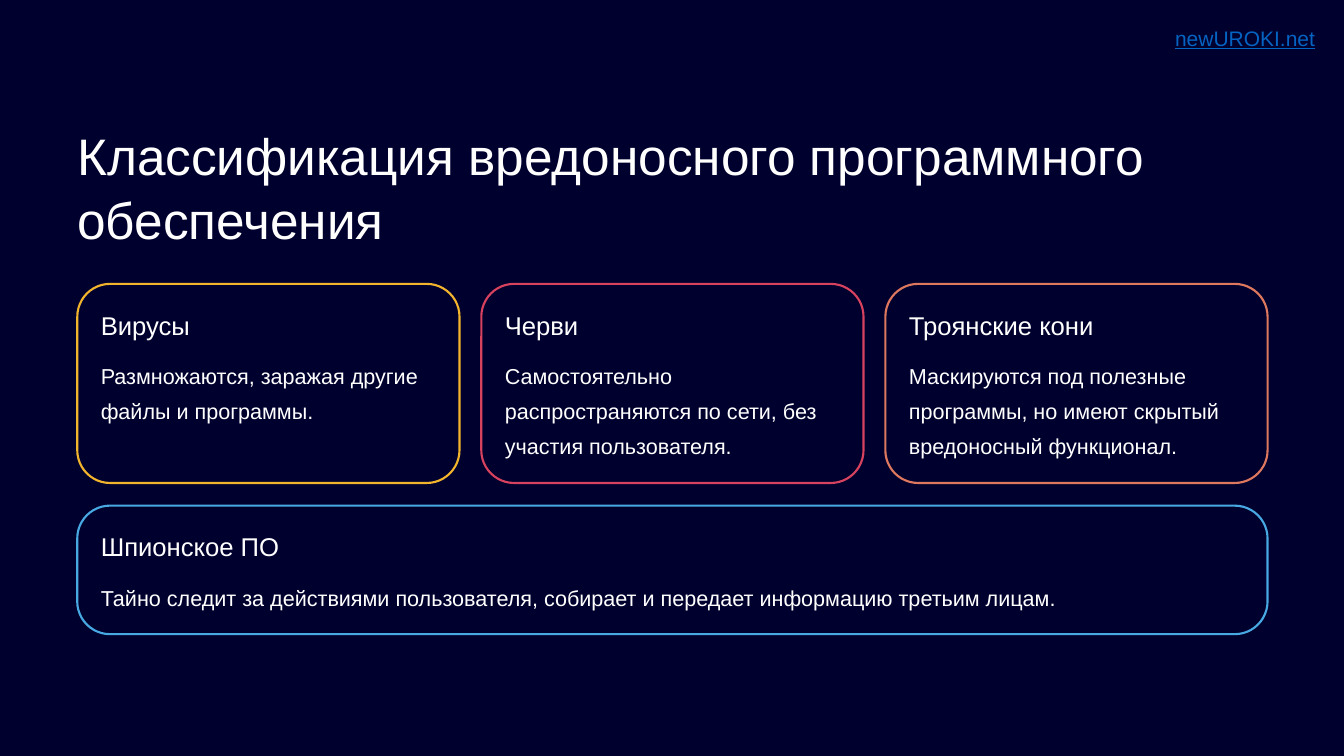
from pptx import Presentation
from pptx.dml.color import RGBColor
from pptx.enum.shapes import MSO_SHAPE
from pptx.enum.text import MSO_ANCHOR, MSO_AUTO_SIZE, PP_ALIGN
from pptx.util import Inches, Pt

NAVY = RGBColor(0x00, 0x00, 0x2E)
WHITE = RGBColor(0xFF, 0xFF, 0xFF)
YELLOW = RGBColor(0xF2, 0xB4, 0x2D)
CRIMSON = RGBColor(0xD7, 0x42, 0x5E)
CORAL = RGBColor(0xDD, 0x78, 0x5E)
SKY = RGBColor(0x48, 0xA8, 0xE2)
LINK_BLUE = RGBColor(0x05, 0x63, 0xC1)

MARGIN, COLUMN, GUTTER = 0.92, 4.55, 0.26
ROWS = ((3.38, 2.37), (6.02, 1.53))
CARD_RADIUS, CARD_PADDING = 0.39, 0.28

MALWARE = (
    (0, 0, 1, YELLOW, "Вирусы", "Размножаются, заражая другие файлы и программы."),
    (0, 1, 1, CRIMSON, "Черви",
     "Самостоятельно распространяются по сети, без участия пользователя."),
    (0, 2, 1, CORAL, "Троянские кони",
     "Маскируются под полезные программы, но имеют скрытый вредоносный функционал."),
    (1, 0, 3, SKY, "Шпионское ПО",
     "Тайно следит за действиями пользователя, собирает и передает информацию третьим лицам."),
)


class MalwareSlide:
    """Holds the deck's style and the slide being filled."""

    def __init__(self, deck):
        self.slide = deck.slides.add_slide(deck.slide_layouts[5])
        background = self.slide.background.fill
        background.solid()
        background.fore_color.rgb = NAVY

    def span(self, column, count):
        left = MARGIN + column * (COLUMN + GUTTER)
        return left, count * COLUMN + (count - 1) * GUTTER

    def add_words(self, holder, words, size, leading=None, color=WHITE, inset=0, wrap=True):
        frame = holder.text_frame
        frame.auto_size = MSO_AUTO_SIZE.NONE
        frame.word_wrap = wrap
        frame.vertical_anchor = MSO_ANCHOR.TOP
        frame.margin_left = frame.margin_right = Inches(inset)
        frame.margin_top = frame.margin_bottom = Inches(inset / 2)
        paragraph = frame.paragraphs[0]
        paragraph.alignment = PP_ALIGN.LEFT
        if leading:
            paragraph.line_spacing = Pt(leading)
        run = paragraph.add_run()
        run.text = words
        run.font.name = "Arial"
        run.font.size = Pt(size)
        run.font.color.rgb = color
        return run

    def title(self, words):
        heading = self.slide.shapes.title
        left, width = self.span(0, 3)
        heading.left, heading.top = Inches(left), Inches(1.45)
        heading.width, heading.height = Inches(width), Inches(1.54)
        self.add_words(heading, words, 44, 55)

    def text(self, left, top, width, height, words, size, **style):
        holder = self.slide.shapes.add_textbox(
            Inches(left), Inches(top), Inches(width), Inches(height))
        return self.add_words(holder, words, size, **style)

    def card(self, row, column, count, color, name, description):
        left, width = self.span(column, count)
        top, height = ROWS[row]
        outline = self.slide.shapes.add_shape(
            MSO_SHAPE.ROUNDED_RECTANGLE,
            Inches(left), Inches(top), Inches(width), Inches(height))
        outline.adjustments[0] = CARD_RADIUS / height
        outline.shadow.inherit = False
        outline.fill.solid()
        outline.fill.fore_color.rgb = NAVY
        outline.line.color.rgb = color
        outline.line.width = Pt(1.8)
        inner = left + CARD_PADDING
        self.text(inner, top + 0.29, 3.08, 0.38, name, 22, leading=27.5, wrap=False)
        self.text(inner, top + 0.83, width - 0.58, height - 1.11,
                  description, 18.5, leading=30)

    def site(self, address):
        run = self.text(13.89, 0.25, 1.88, 0.4, address, 18,
                        color=LINK_BLUE, inset=0.1, wrap=False)
        run.font.underline = True


def main():
    deck = Presentation()
    deck.slide_width, deck.slide_height = Inches(16), Inches(9)
    page = MalwareSlide(deck)
    page.title("Классификация вредоносного программного обеспечения")
    for kind in MALWARE:
        page.card(*kind)
    page.site("newUROKI.net")
    deck.save("out.pptx")


if __name__ == "__main__":
    main()
